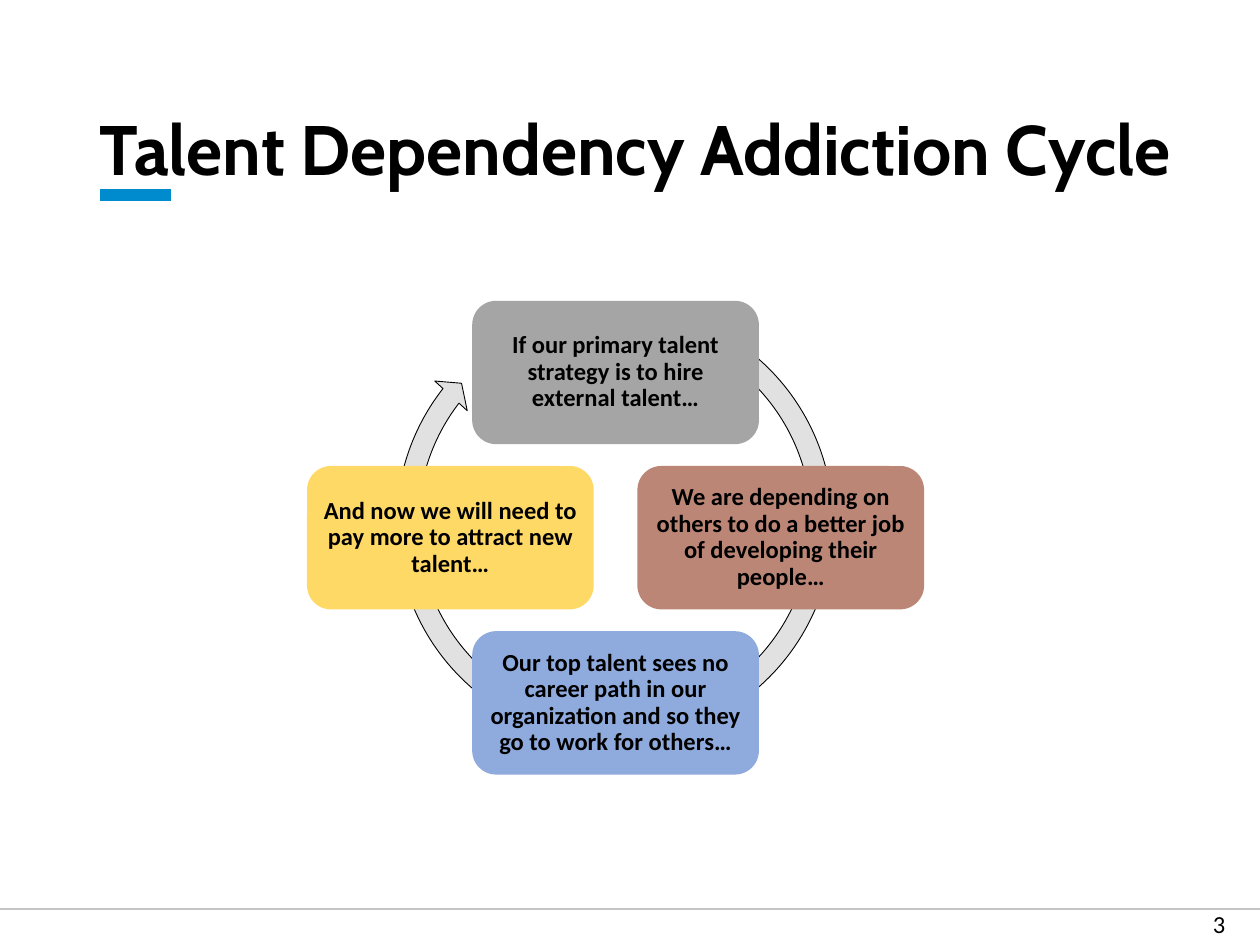
from lxml.etree import SubElement
from pptx import Presentation
from pptx.dml.color import RGBColor
from pptx.enum.shapes import MSO_CONNECTOR, MSO_SHAPE
from pptx.enum.text import MSO_ANCHOR, PP_ALIGN
from pptx.oxml.ns import qn
from pptx.util import Cm, Pt

BLACK = RGBColor(0x00, 0x00, 0x00)
BLUE = RGBColor(0x00, 0x8B, 0xCE)
RULE_GRAY = RGBColor(0xC4, 0xC4, 0xC4)
ARROW_GRAY = RGBColor(0xE1, 0xE1, 0xE1)
GRAY = RGBColor(0xA5, 0xA5, 0xA5)
BROWN = RGBColor(0xBB, 0x86, 0x76)
PERIWINKLE = RGBColor(0x8F, 0xAA, 0xDC)
YELLOW = RGBColor(0xFF, 0xD9, 0x66)


def add_text(tf, text, font, size, bold=True):
    p = tf.paragraphs[0]
    r = p.add_run()
    r.text = text
    r.font.name = font
    r.font.size = Pt(size)
    r.font.bold = bold
    r.font.color.rgb = BLACK
    return p


def add_rule(left, right, y, color, width):
    line = s.shapes.add_connector(MSO_CONNECTOR.STRAIGHT, Cm(left), Cm(y), Cm(right), Cm(y))
    line.line.color.rgb = color
    line.line.width = Pt(width)
    SubElement(line._element.spPr, qn("a:effectLst"))


prs = Presentation()
prs.slide_width = Cm(25.4)
prs.slide_height = Cm(19.05)
s = prs.slides.add_slide(prs.slide_layouts[6])

# Accent bar under the title and footer rule
add_rule(2.02, 3.45, 3.93, BLUE, 6.75)
add_rule(0, 25.4, 18.33, RULE_GRAY, 1)

# Slide number
sp = s.shapes.add_textbox(Cm(24.2), Cm(18.21), Cm(1.1), Cm(0.86))
sp.text_frame.word_wrap = False
add_text(sp.text_frame, "3", "Calibri", 14, bold=False)

# Title
sp = s.shapes.add_textbox(Cm(1.75), Cm(0.25), Cm(22.2), Cm(3.68))
tf = sp.text_frame
tf.word_wrap = True
tf.vertical_anchor = MSO_ANCHOR.BOTTOM
p = add_text(tf, "Talent Dependency Addiction Cycle", "Cabin", 40)
p.line_spacing = 0.8

# Circular arrow behind the steps
sp = s.shapes.add_shape(MSO_SHAPE.CIRCULAR_ARROW, Cm(7.77), Cm(5.92), Cm(9.25), Cm(9.25))
sp.shadow.inherit = False
sp.fill.solid()
sp.fill.fore_color.rgb = ARROW_GRAY
sp.line.color.rgb = BLACK
sp.line.width = Pt(0.5)
for i, value in enumerate([0.047, 2.729, 130.692, 178.709, 0.048]):
    sp.adjustments[i] = value

# Steps, clockwise from the top: direction from the centre, colour, text
STEPS = [
    (0, -1, GRAY, "If our primary talent strategy is to hire external talent…"),
    (1, 0, BROWN, "We are depending on others to do a better job of developing their people…"),
    (0, 1, PERIWINKLE, "Our top talent sees no career path in our organization and so they go to work for others…"),
    (-1, 0, YELLOW, "And now we will need to pay more to attract new talent…"),
]
CENTER_X, CENTER_Y, RADIUS = 12.41, 10.84, 3.33
BOX_W, BOX_H = 5.78, 2.89

for dx, dy, color, text in STEPS:
    left = CENTER_X + dx * RADIUS - BOX_W / 2
    top = CENTER_Y + dy * RADIUS - BOX_H / 2
    sp = s.shapes.add_shape(MSO_SHAPE.ROUNDED_RECTANGLE, Cm(left), Cm(top), Cm(BOX_W), Cm(BOX_H))
    sp.shadow.inherit = False
    sp.fill.solid()
    sp.fill.fore_color.rgb = color
    sp.line.fill.background()
    tf = sp.text_frame
    tf.word_wrap = True
    tf.vertical_anchor = MSO_ANCHOR.MIDDLE
    tf.margin_left = tf.margin_right = tf.margin_top = tf.margin_bottom = Cm(0.15)
    p = add_text(tf, text, "Calibri", 14)
    p.alignment = PP_ALIGN.CENTER
    p.line_spacing = 0.9

prs.save("out.pptx")
